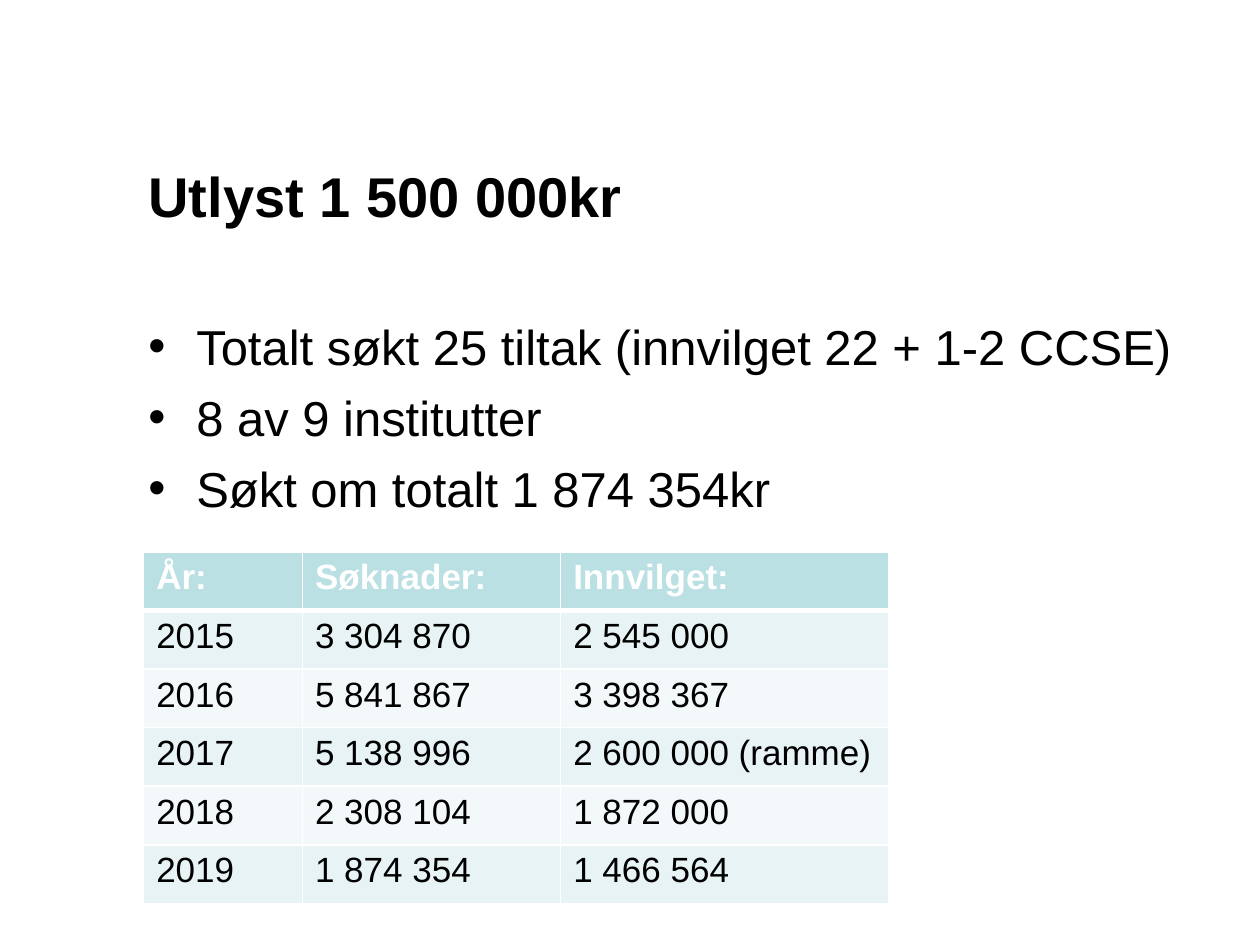
from lxml import etree
from pptx import Presentation
from pptx import util as u
from pptx.dml.color import RGBColor
from pptx.enum import text
from pptx.oxml import ns

BLACK = RGBColor(0x00, 0x00, 0x00)
WHITE = RGBColor(0xFF, 0xFF, 0xFF)
HEADER = RGBColor(0xBB, 0xE0, 0xE3)
BANDS = (RGBColor(0xE7, 0xF3, 0xF4), RGBColor(0xF3, 0xF9, 0xFA))

WIDTH, HEIGHT = 10, 7.5
TITLE = "Utlyst 1 500 000kr"
BULLETS = [
    "Totalt søkt 25 tiltak (innvilget 22 + 1-2 CCSE)",
    "8 av 9 institutter",
    "Søkt om totalt 1 874 354kr",
]
GRANTS = [
    ("År:", "Søknader:", "Innvilget:"),
    ("2015", "3 304 870", "2 545 000"),
    ("2016", "5 841 867", "3 398 367"),
    ("2017", "5 138 996", "2 600 000 (ramme)"),
    ("2018", "2 308 104", "1 872 000"),
    ("2019", "1 874 354", "1 466 564"),
]


class SlideBuilder:
    font = "Arial"

    def __init__(self, slide):
        self.slide = slide

    def area(self, left, top, width, height):
        return (u.Inches(left * WIDTH), u.Inches(top * HEIGHT),
                u.Inches(width * WIDTH), u.Inches(height * HEIGHT))

    def add_run(self, paragraph, words, size, color=BLACK, bold=False):
        run = paragraph.add_run()
        run.text = words
        run.font.name = self.font
        run.font.size = u.Pt(size)
        run.font.bold = bold
        run.font.color.rgb = color

    def text_frame(self, area, anchor):
        frame = self.slide.shapes.add_textbox(*self.area(*area)).text_frame
        frame.word_wrap = True
        frame.vertical_anchor = anchor
        return frame

    def title(self, words, area):
        frame = self.text_frame(area, text.MSO_ANCHOR.MIDDLE)
        self.add_run(frame.paragraphs[0], words, 32, bold=True)

    def bullets(self, lines, area):
        frame = self.text_frame(area, text.MSO_ANCHOR.TOP)
        frame.margin_top = u.Inches(0.1)
        indent = u.Inches(0.38)
        for index, line in enumerate(lines):
            paragraph = frame.add_paragraph() if index else frame.paragraphs[0]
            if index:
                paragraph.space_before = u.Pt(7)
            properties = paragraph._p.get_or_add_pPr()
            properties.set("marL", str(indent))
            properties.set("indent", str(-indent))
            etree.SubElement(properties, ns.qn("a:buFont"), typeface=self.font)
            etree.SubElement(properties, ns.qn("a:buChar"), char="•")
            self.add_run(paragraph, line, 28)

    def borders(self, cell, **widths):
        properties = cell._tc.get_or_add_tcPr()
        for side, width in widths.items():
            line = etree.SubElement(properties, ns.qn(f"a:ln{side}"), w=str(u.Pt(width)))
            fill = etree.SubElement(line, ns.qn("a:solidFill"))
            etree.SubElement(fill, ns.qn("a:srgbClr"), val=str(WHITE))

    def table(self, rows, area, column_shares):
        table = self.slide.shapes.add_table(
            len(rows), len(column_shares), *self.area(*area)).table
        for column, share in zip(table.columns, column_shares):
            column.width = u.Inches(share * WIDTH)
        for row_index, row in enumerate(rows):
            header = row_index == 0
            background = HEADER if header else BANDS[(row_index - 1) % 2]
            for column_index, words in enumerate(row):
                cell = table.cell(row_index, column_index)
                self.borders(cell, L=1, R=1, T=3 if row_index == 1 else 1,
                             B=3 if header else 1)
                cell.fill.solid()
                cell.fill.fore_color.rgb = background
                self.add_run(cell.text_frame.paragraphs[0], words, 20,
                             WHITE if header else BLACK, header)


def main():
    presentation = Presentation()
    presentation.slide_width = u.Inches(WIDTH)
    presentation.slide_height = u.Inches(HEIGHT)
    builder = SlideBuilder(presentation.slides.add_slide(presentation.slide_layouts[6]))
    builder.title(TITLE, (0.108, 0.92 / HEIGHT, 0.842, 1.25 / HEIGHT))
    builder.bullets(BULLETS, (0.108, 2.41 / HEIGHT, 0.842, 4.57 / HEIGHT))
    builder.table(GRANTS, (0.114, 4.38 / HEIGHT, 0.591, 2.79 / HEIGHT),
                  (0.126, 0.205, 0.26))
    presentation.save("out.pptx")


if __name__ == "__main__":
    main()
